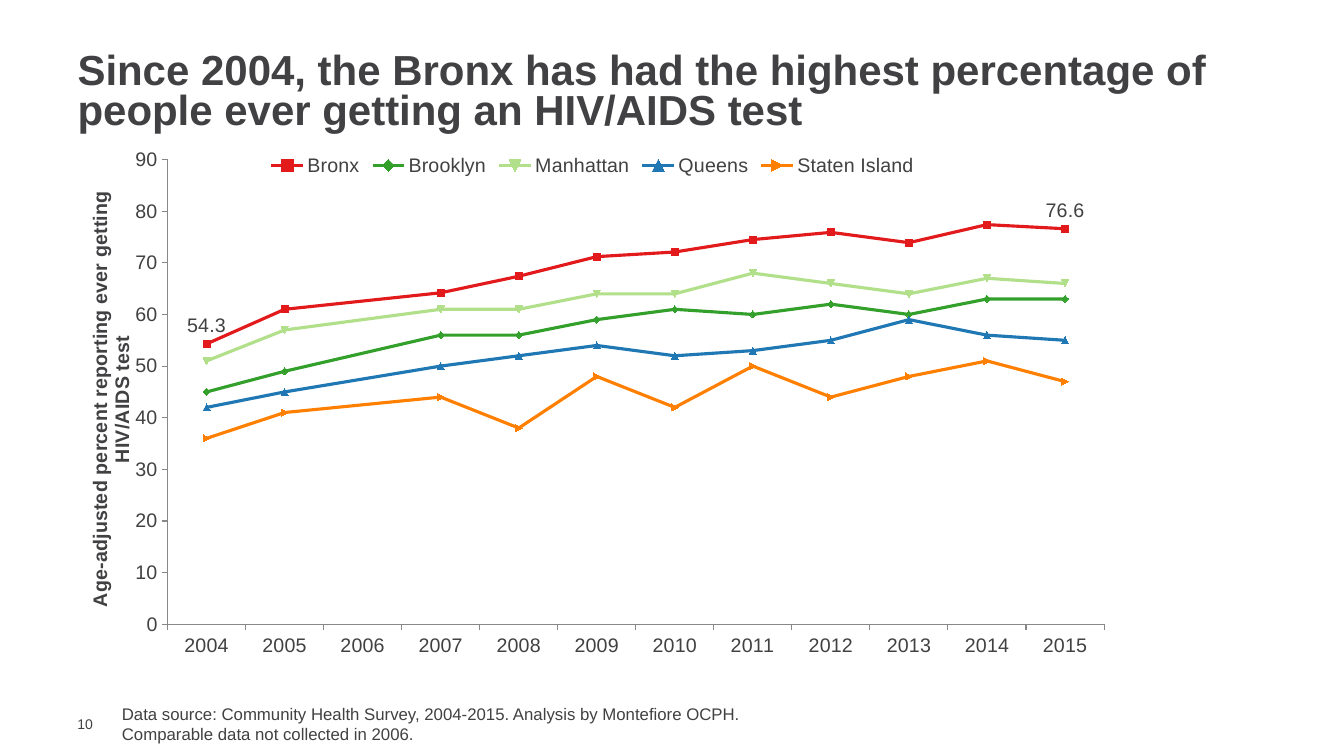
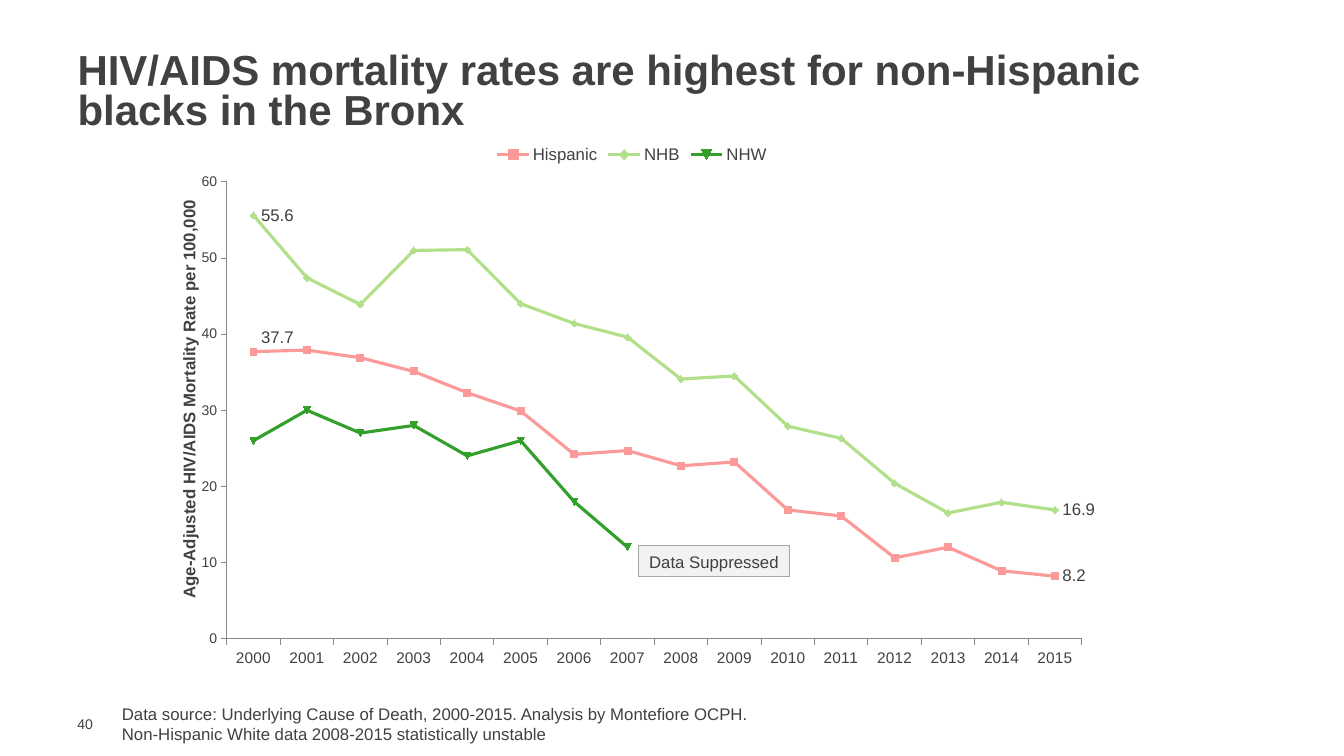
from lxml import etree
from pptx import Presentation
from pptx.chart.data import CategoryChartData
from pptx.dml.color import RGBColor
from pptx.enum.chart import XL_CHART_TYPE as CT, XL_LABEL_POSITION as LABEL, XL_LEGEND_POSITION as LEGEND
from pptx.enum.chart import XL_MARKER_STYLE as MARKER
from pptx.enum.shapes import MSO_SHAPE
from pptx.enum.text import MSO_ANCHOR as ANCHOR, PP_ALIGN as ALIGN
from pptx.oxml.ns import qn
from pptx.util import Pt

FONT = "Arial"
TEXT = RGBColor(0x41, 0x40, 0x42)
AXIS = RGBColor(0x88, 0x88, 0x88)
NOTE_FILL = RGBColor(0xF2, 0xF2, 0xF2)
NOTE_LINE = RGBColor(0xA6, 0xA6, 0xA6)
RED = RGBColor(0xE3, 0x1A, 0x1C)
GREEN = RGBColor(0x33, 0xA0, 0x2C)
LIGHT_GREEN = RGBColor(0xB2, 0xDF, 0x8A)
BLUE = RGBColor(0x1F, 0x78, 0xB4)
ORANGE = RGBColor(0xFF, 0x7F, 0x00)
PINK = RGBColor(0xFB, 0x9A, 0x99)

TESTING = [
    ("Bronx", RED, [54.3, 61, None, 64.2, 67.4, 71.2, 72.1, 74.5, 75.9, 73.9, 77.4, 76.6]),
    ("Brooklyn", GREEN, [45, 49, None, 56, 56, 59, 61, 60, 62, 60, 63, 63]),
    ("Manhattan", LIGHT_GREEN, [51, 57, None, 61, 61, 64, 64, 68, 66, 64, 67, 66]),
    ("Queens", BLUE, [42, 45, None, 50, 52, 54, 52, 53, 55, 59, 56, 55]),
    ("Staten Island", ORANGE, [36, 41, None, 44, 38, 48, 42, 50, 44, 48, 51, 47]),
]
MORTALITY = [
    ("Hispanic", PINK, [37.7, 37.9, 36.9, 35.1, 32.3, 29.9, 24.2, 24.7,
                        22.7, 23.2, 16.9, 16.1, 10.6, 12, 8.9, 8.2]),
    ("NHB", LIGHT_GREEN, [55.6, 47.4, 43.9, 51, 51.1, 44, 41.4, 39.6,
                          34.1, 34.5, 27.9, 26.3, 20.4, 16.5, 17.9, 16.9]),
    ("NHW", GREEN, [26, 30, 27, 28, 24, 26, 18, 12] + [None] * 8),
]


def set_font(font, size, bold=False):
    font.name = FONT
    font.size = Pt(size)
    font.bold = bold
    font.color.rgb = TEXT


def add_run(p, text, size, bold=False):
    r = p.add_run()
    r.text = text
    set_font(r.font, size, bold)


def add_text(s, box, lines, size):
    tf = s.shapes.add_textbox(*map(Pt, box)).text_frame
    tf.word_wrap = True
    for i, line in enumerate(lines):
        p = tf.add_paragraph() if i else tf.paragraphs[0]
        add_run(p, line, size)
    return tf


def add_slide(prs, title, number, source):
    s = prs.slides.add_slide(prs.slide_layouts[5])
    sp = s.shapes.title
    sp.left, sp.top, sp.width, sp.height = map(Pt, (48.2, 34, 864, 65.5))
    tf = sp.text_frame
    tf.vertical_anchor = ANCHOR.MIDDLE
    p = tf.paragraphs[0]
    p.alignment = ALIGN.LEFT
    p.line_spacing = 0.8
    add_run(p, title, 30, True)

    tf = add_text(s, (48.2, 511.2, 31, 12.2), [number], 10)
    tf.margin_top = tf.margin_right = tf.margin_bottom = 0
    tf.vertical_anchor = ANCHOR.MIDDLE
    add_text(s, (80, 499, 699, 36), source, 12)
    return s


def set_layout(parent, index, **values):
    old = parent.find(qn("c:layout"))
    if old is not None:
        parent.remove(old)
    layout = etree.Element(qn("c:layout"))
    manual = etree.SubElement(layout, qn("c:manualLayout"))
    for name, value in values.items():
        etree.SubElement(manual, qn("c:" + name)).set("val", str(value))
    parent.insert(index, layout)


def style_axis(axis, size):
    axis.has_major_gridlines = False
    axis.format.line.color.rgb = AXIS
    axis.format.line.width = Pt(0.75)
    set_font(axis.tick_labels.font, size)


def add_axis_title(axis, text, size, x, y):
    title = axis.axis_title
    add_run(title.text_frame.paragraphs[0], text, size, True)
    for body in title.element.iter(qn("a:bodyPr")):
        body.set("rot", "-5400000")
        body.set("vert", "horz")
    set_layout(title.element, 1, xMode="edge", yMode="edge", x=x, y=y)


def style_series(ser, color):
    ser.smooth = False
    ser.format.line.color.rgb = color
    ser.format.line.width = Pt(2.25)
    ser.marker.style = MARKER.AUTOMATIC
    ser.marker.size = 5
    ser.marker.format.fill.solid()
    ser.marker.format.fill.fore_color.rgb = color
    ser.marker.format.line.color.rgb = color


def label_ends(ser, position, size):
    ser.data_labels.show_value = False
    for i in (0, len(ser.values) - 1):
        label = ser.points[i].data_label
        set_font(label.font, size)
        label.position = position


def add_line_chart(s, box, first_year, rows, top, sizes, plot):
    cat_size, val_size, legend_size = sizes
    data = CategoryChartData()
    data.categories = [str(first_year + i) for i in range(len(rows[0][2]))]
    for name, _, values in rows:
        data.add_series(name, values)
    chart = s.shapes.add_chart(CT.LINE_MARKERS, *map(Pt, box), data).chart
    set_font(chart.font, val_size)
    chart.has_title = False
    chart.has_legend = True
    chart.legend.position = LEGEND.TOP
    chart.legend.include_in_layout = False
    set_font(chart.legend.font, legend_size)
    style_axis(chart.category_axis, cat_size)
    style_axis(chart.value_axis, val_size)
    chart.value_axis.minimum_scale = 0
    chart.value_axis.maximum_scale = top
    chart.value_axis.major_unit = 10
    for ser, (_, color, _) in zip(chart.series, rows):
        style_series(ser, color)
    x, y, w, h = plot
    set_layout(next(chart.element.iter(qn("c:plotArea"))), 0, layoutTarget="inner",
               xMode="edge", yMode="edge", x=x, y=y, w=w, h=h)
    next(chart.element.iter(qn("c:dispBlanksAs"))).set("val", "span")
    return chart


def add_note(s, box, text):
    sp = s.shapes.add_shape(MSO_SHAPE.RECTANGLE, *map(Pt, box))
    sp.shadow.inherit = False
    sp.fill.solid()
    sp.fill.fore_color.rgb = NOTE_FILL
    sp.line.color.rgb = NOTE_LINE
    sp.line.width = Pt(0.75)
    sp.text_frame.word_wrap = False
    p = sp.text_frame.paragraphs[0]
    p.alignment = ALIGN.CENTER
    add_run(p, text, 12)


def add_testing_slide(prs):
    s = add_slide(
        prs, "Since 2004, the Bronx has had the highest percentage of people ever getting an HIV/AIDS test",
        "10", ["Data source: Community Health Survey, 2004-2015. Analysis by Montefiore OCPH.",
               "Comparable data not collected in 2006."])
    chart = add_line_chart(s, (47.5, 102.2, 751.7, 381.6), 2004, TESTING, 90,
                           (14, 14, 14), (0.096, 0.031, 0.89, 0.87))
    add_axis_title(chart.value_axis, "Age-adjusted percent reporting ever getting HIV/AIDS test",
                   14, 0.016, 0.084)
    label_ends(chart.series[0], LABEL.ABOVE, 14)


def add_mortality_slide(prs):
    s = add_slide(
        prs, "HIV/AIDS mortality rates are highest for non-Hispanic blacks in the Bronx",
        "40", ["Data source: Underlying Cause of Death, 2000-2015. Analysis by Montefiore OCPH.",
               "Non-Hispanic White data 2008-2015 statistically unstable"])
    chart = add_line_chart(s, (119.5, 95.8, 663.8, 383.8), 2000, MORTALITY, 60,
                           (11, 10, 12), (0.064, 0.089, 0.92, 0.85))
    add_axis_title(chart.value_axis, "Age-Adjusted HIV/AIDS Mortality Rate per 100,000",
                   12, 0.009, 0.117)
    hispanic, nhb, _ = chart.series
    for ser in (hispanic, nhb):
        label_ends(ser, LABEL.RIGHT, 12)
    first_label = next(chart.element.iter(qn("c:dLbl")))
    set_layout(first_label, 1, x=0, y=-0.026)
    add_note(s, (456, 390, 108, 22), "Data Suppressed")


def main():
    prs = Presentation()
    prs.slide_width, prs.slide_height = Pt(960), Pt(540)
    add_testing_slide(prs)
    add_mortality_slide(prs)
    prs.save("out.pptx")


if __name__ == "__main__":
    main()
